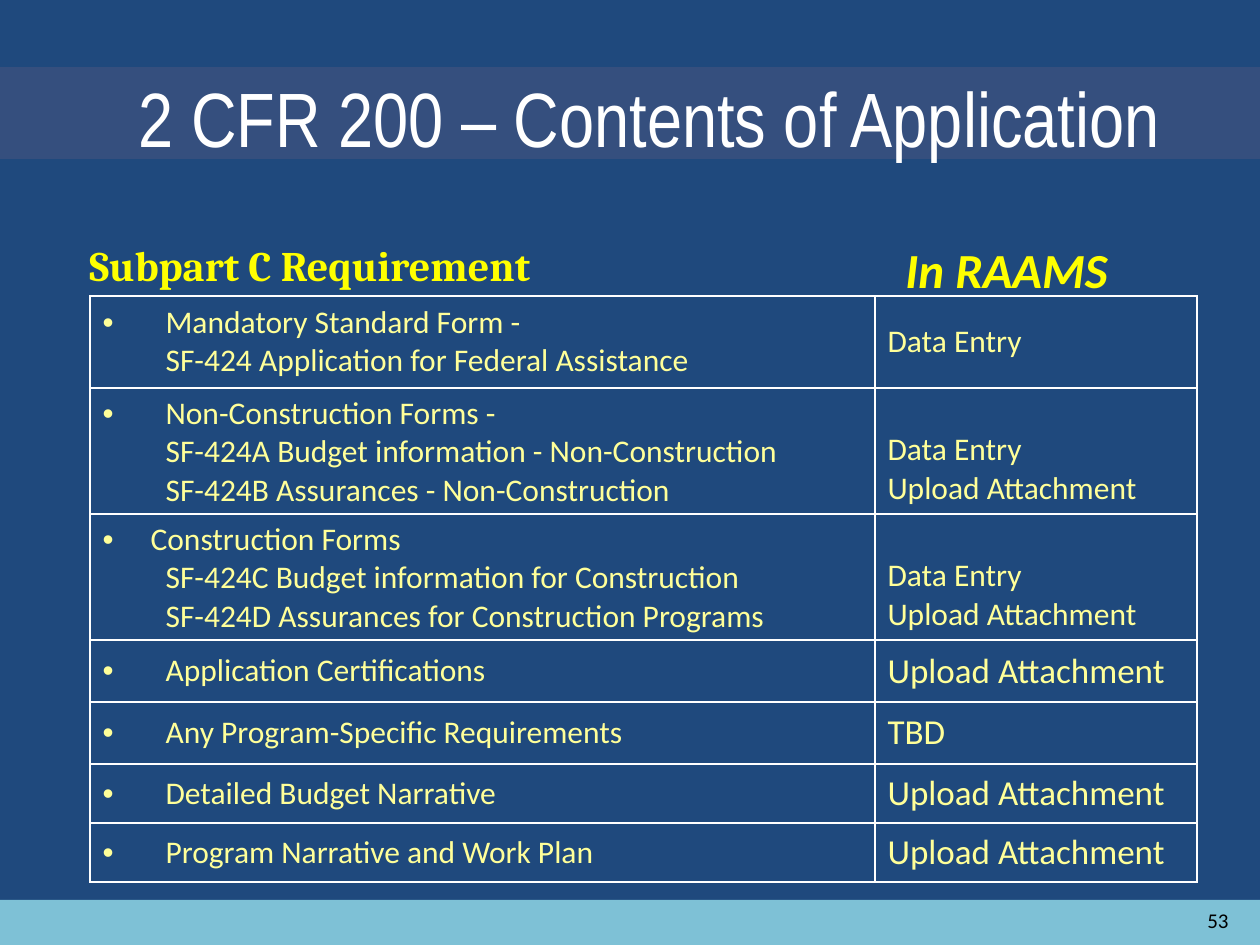
import pptx
import pptx.util
import pptx.oxml
import pptx.oxml.ns
from pptx.dml.color import RGBColor
from pptx.enum.shapes import MSO_SHAPE
from pptx.enum.text import MSO_ANCHOR, PP_ALIGN

PX = 914400 / 126
NAVY = RGBColor(0x1F, 0x49, 0x7D)
SLATE = RGBColor(0x39, 0x50, 0x7F)
AQUA = RGBColor(0x7E, 0xC1, 0xD6)
WHITE = RGBColor(0xFF, 0xFF, 0xFF)
YELLOW = RGBColor(0xFF, 0xFF, 0x00)
CREAM = RGBColor(0xFF, 0xFF, 0x99)
BLACK = RGBColor(0x00, 0x00, 0x00)
INDENT = 63


def px(*lengths):
    return [pptx.util.Emu(round(length * PX)) for length in lengths]


def style(para, font, size, color, bold=False, italic=False):
    for span in para.runs:
        span.font.name = font
        span.font.size = pptx.util.Pt(size)
        span.font.color.rgb = color
        span.font.bold = bold
        span.font.italic = italic


deck = pptx.Presentation()
deck.slide_width, deck.slide_height = px(1260, 945)
page = deck.slides.add_slide(deck.slide_layouts[6])
page.background.fill.solid()
page.background.fill.fore_color.rgb = NAVY

# Footer and title bands
for top, height, color, opacity in [(900, 48, AQUA, 100), (67, 92, SLATE, 87)]:
    band = page.shapes.add_shape(MSO_SHAPE.RECTANGLE, *px(0, top, 1260, height))
    band.shadow.inherit = False
    band.line.fill.background()
    band.fill.solid()
    band.fill.fore_color.rgb = color
    if opacity < 100:
        tint = band.fill._xPr.find(".//" + pptx.oxml.ns.qn("a:srgbClr"))
        tint.append(pptx.oxml.parse_xml(
            f'<a:alpha {pptx.oxml.ns.nsdecls("a")} val="{opacity * 1000}"/>'))

# Title, column headings and page number
LEFT, RIGHT = PP_ALIGN.LEFT, PP_ALIGN.RIGHT
TOP, MIDDLE = MSO_ANCHOR.TOP, MSO_ANCHOR.MIDDLE
labels = [
    ("\t2 CFR 200 – Contents of Application", (63, 38, 1187, 157),
     LEFT, MIDDLE, ("Arial Narrow", 44, WHITE)),
    ("Subpart C Requirement", (77, 233, 700, 60),
     LEFT, TOP, ("Cambria", 24, YELLOW, True)),
    ("In RAAMS", (800, 233, 320, 60),
     RIGHT, TOP, ("Calibri", 28, YELLOW, True, True)),
    ("53", (948, 895, 293, 50), RIGHT, MIDDLE, ("Calibri", 12, BLACK)),
]
for text, place, align, anchor, look in labels:
    box = page.shapes.add_textbox(*px(*place))
    box.text_frame.word_wrap = True
    box.text_frame.vertical_anchor = anchor
    para = box.text_frame.paragraphs[0]
    para.text = text
    para.alignment = align
    style(para, *look)

# Requirements: row height, bullet hang, requirement lines, method, method size
requirements = [
    (92, INDENT, "Mandatory Standard Form -\nSF-424 Application for Federal Assistance",
     "Data Entry", 18),
    (126, INDENT, "Non-Construction Forms -\n"
     "SF-424A Budget information - Non-Construction\n"
     "SF-424B Assurances - Non-Construction", "Data Entry\nUpload Attachment", 18),
    (126, 48, "Construction Forms\n"
     "SF-424C Budget information for Construction\n"
     "SF-424D Assurances for Construction Programs", "Data Entry\nUpload Attachment", 18),
    (62, INDENT, "Application Certifications", "Upload Attachment", 20),
    (62, INDENT, "Any Program-Specific Requirements", "TBD", 20),
    (59, INDENT, "Detailed Budget Narrative", "Upload Attachment", 20),
    (59, INDENT, "Program Narrative and Work Plan", "Upload Attachment", 20),
]
total = sum(row[0] for row in requirements)
frame = page.shapes.add_table(len(requirements), 2, *px(90, 296, 1107, total))
table = frame.table
table.first_row = table.horz_banding = False
table.columns[0].width, table.columns[1].width = px(785, 322)

for index, (height, hang, requirement, method, size) in enumerate(requirements):
    table.rows[index].height = px(height)[0]
    left_cell, right_cell = table.cell(index, 0), table.cell(index, 1)
    for cell, text, points in [(left_cell, requirement, 18), (right_cell, method, size)]:
        cell.text_frame.text = text
        cell.vertical_anchor = MIDDLE
        for para in cell.text_frame.paragraphs:
            style(para, "Calibri", points, CREAM)
        properties = cell._tc.get_or_add_tcPr()
        for side in ("lnL", "lnR", "lnT", "lnB"):
            properties.append(pptx.oxml.parse_xml(
                f'<a:{side} {pptx.oxml.ns.nsdecls("a")} w="12700"><a:solidFill>'
                f'<a:srgbClr val="{WHITE}"/></a:solidFill></a:{side}>'))
        cell.fill.solid()
        cell.fill.fore_color.rgb = NAVY

    # Two methods line up with the last two requirement lines
    if "\n" in method:
        right_cell.vertical_anchor = MSO_ANCHOR.BOTTOM

    for number, para in enumerate(left_cell.text_frame.paragraphs):
        margin, first = (INDENT, 0) if number else (hang, -hang)
        layout = para._p.get_or_add_pPr()
        layout.set("marL", str(px(margin)[0]))
        layout.set("indent", str(px(first)[0]))
        if number == 0:
            layout.append(pptx.oxml.parse_xml(
                f'<a:buFont {pptx.oxml.ns.nsdecls("a")} typeface="Arial"/>'))
            layout.append(pptx.oxml.parse_xml(
                f'<a:buChar {pptx.oxml.ns.nsdecls("a")} char="•"/>'))

deck.save("out.pptx")
